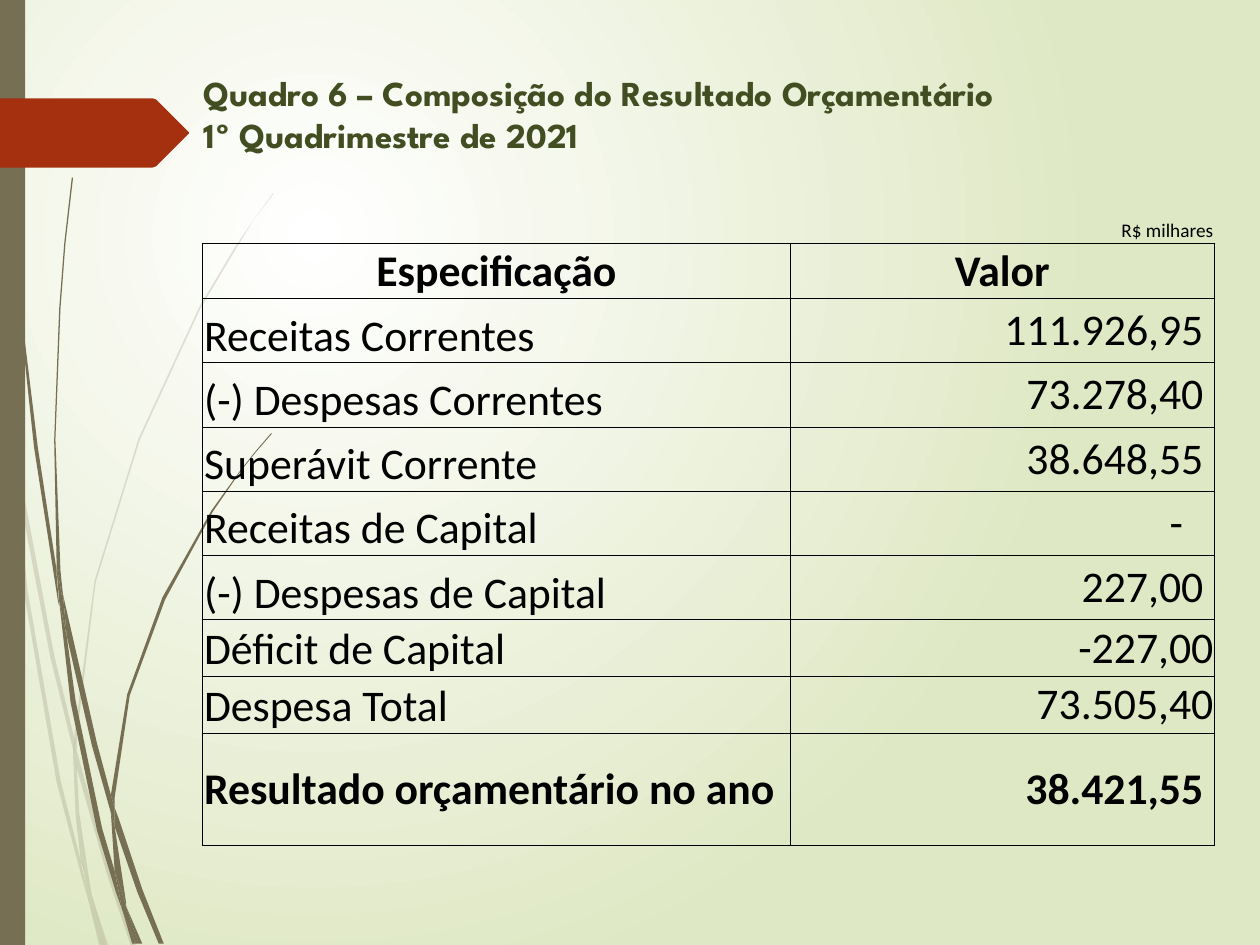
from lxml import etree
from pptx import Presentation
from pptx import util as u
from pptx.dml.color import RGBColor
from pptx.enum import shapes, text
from pptx.oxml import ns, parse_xml

OLIVE = "766F54"
PALE = [
    [(8, 350), (6, 322), (0, 282), (0, 299), (7, 344)],
    [(40, 522), (59, 599), (59, 586), (43, 520), (10, 345), (12, 376)],
    [(64, 607), (61, 596), (61, 610), (85, 694), (104, 751), (108, 751), (88, 692)],
    [(83, 751), (86, 751), (73, 711)],
    [(64, 683), (48, 619), (22, 469), (12, 376), (8, 350), (19, 470), (45, 621),
     (64, 693), (70, 714), (69, 707)],
    [(58, 599), (60, 646), (64, 683), (67, 692), (73, 711), (72, 706), (63, 646),
     (61, 610), (61, 608)],
    [(61, 584), (76, 462), (111, 349), (159, 245), (187, 198), (201, 175), (217, 154),
     (217, 153), (201, 175), (186, 197), (158, 244), (110, 348), (75, 461), (59, 584),
     (59, 586), (61, 596)],
    [(70, 714), (79, 751), (82, 751)],
    [(61, 608), (61, 610), (61, 596), (59, 586), (58, 599)],
    [(67, 692), (65, 683), (69, 707), (70, 714), (82, 751), (83, 751), (73, 711)],
]
DARK = [
    [(5, 110), (14, 233), (27, 355), (46, 477), (47, 481), (45, 457), (45, 453),
     (30, 355), (15, 232), (6, 109), (4, 48), (3, 0), (2, 0), (3, 48)],
    [(73, 592), (88, 645), (88, 633), (88, 631), (77, 590), (50, 472), (53, 505)],
    [(94, 649), (91, 641), (91, 656), (109, 708), (126, 749), (130, 749), (113, 706)],
    [(91, 691), (81, 657), (60, 556), (53, 505), (47, 477), (56, 557), (77, 659),
     (92, 708), (97, 722), (96, 717)],
    [(50, 472), (48, 453), (44, 349), (48, 245), (52, 193), (58, 141), (57, 141),
     (51, 193), (47, 245), (43, 349), (45, 449), (49, 472)],
    [(110, 749), (113, 749), (100, 719)],
    [(47, 477), (53, 505), (50, 472), (49, 472), (45, 449), (45, 453)],
    [(91, 633), (103, 552), (131, 476), (169, 406), (191, 374), (203, 359), (216, 344),
     (215, 344), (203, 358), (191, 373), (168, 405), (129, 474), (101, 551), (88, 631),
     (91, 641)],
    [(97, 722), (105, 749), (108, 749)],
    [(88, 645), (91, 691), (96, 706), (100, 719), (100, 716), (91, 656), (90, 651)],
    [(88, 645), (90, 651), (91, 656), (91, 641), (88, 631), (88, 633)],
    [(96, 706), (91, 691), (96, 717), (97, 722), (108, 749), (110, 749), (100, 719)],
]
ARROW = [(149, 29), (124, 54), (121, 55), (0, 55), (0, 0), (121, 0), (124, 1), (149, 26),
         (150, 27), (150, 28)]
ROWS = [
    ("Receitas Correntes", "111.926,95", 0.51, 0.09),
    ("(-) Despesas Correntes", "73.278,40", 0.51, 0.09),
    ("Superávit Corrente", "38.648,55", 0.51, 0.09),
    ("Receitas de Capital", "-", 0.51, 0.25),
    ("(-) Despesas de Capital", "227,00", 0.51, 0.09),
    ("Déficit de Capital", "-227,00", 0.45, 0.01),
    ("Despesa Total", "73.505,40", 0.45, 0.01),
    ("Resultado orçamentário no ano", "38.421,55", 0.89, 0.09),
]


def color(code):
    """Turn a hex string into a colour."""
    return RGBColor.from_string(code)


def paint(shape, code, alpha=100):
    """Give a shape a plain fill without line or shadow."""
    shape.shadow.inherit = False
    shape.fill.solid()
    shape.fill.fore_color.rgb = color(code)
    shape.line.fill.background()
    if alpha < 100:
        tint = shape.fill._xPr.find(".//" + ns.qn("a:srgbClr"))
        etree.SubElement(tint, ns.qn("a:alpha")).set("val", str(alpha * 1000))


def outline(parts, points, left, top, code, alpha=100):
    """Draw a closed outline from points in hundredths of an inch."""
    pen = parts.build_freeform(*points[0], scale=u.Inches(0.01))
    pen.add_line_segments(points[1:])
    paint(pen.convert_to_shape(u.Inches(left), u.Inches(top)), code, alpha)


def style(para, size, face, code, bold=False):
    """Format the runs of a paragraph."""
    for run in para.runs:
        font = run.font
        font.size, font.name, font.bold = u.Pt(size), face, bold
        font.color.rgb = color(code)


def backdrop(slide):
    """Fill the background with a radial gradient."""
    fill = slide.background.fill
    fill.gradient()
    for stop, code in zip(fill.gradient_stops, ("FFFFFF", "DFE8C4")):
        stop.color.rgb = color(code)
    grad = slide.background._cSld.find(".//" + ns.qn("a:gradFill"))
    ring = parse_xml(f'<a:path {ns.nsdecls("a")} path="circle"><a:fillToRect '
                     'l="50000" t="50000" r="100000" b="100000"/></a:path>')
    grad.replace(grad.find(ns.qn("a:lin")), ring)


def margin(slide, left, top, height):
    """Draw the stems, the side bar and the arrow at the left edge."""
    for stems, alpha in ((PALE, 20), (DARK, 100)):
        group = slide.shapes.add_group_shape()
        for points in stems:
            outline(group.shapes, points, left, top, OLIVE, alpha)
    bar = slide.shapes.add_shape(shapes.MSO_SHAPE.RECTANGLE, u.Inches(left), u.Inches(top),
                                 u.Inches(0.2), u.Inches(height))
    paint(bar, OLIVE)
    outline(slide.shapes, ARROW, left, top + 0.78, "A53010")


def title(slide, left, top, width, height):
    """Write the heading."""
    box = slide.shapes.add_textbox(*map(u.Inches, (left, top, width, height)))
    frame = box.text_frame
    frame.word_wrap = True
    frame.text = "Quadro 6 – Composição do Resultado Orçamentário \v1º Quadrimestre de 2021"
    style(frame.paragraphs[0], 20, "League Spartan", "424D22", True)


def border(cell, sides):
    """Rule the named sides of a cell and clear the others."""
    props = cell._tc.get_or_add_tcPr()
    for spot, side in enumerate("LRTB"):
        ink = '<a:solidFill><a:srgbClr val="000000"/></a:solidFill>'
        if side not in sides:
            ink = "<a:noFill/>"
        props.insert(spot, parse_xml(f'<a:ln{side} {ns.nsdecls("a")} w="6350">{ink}</a:ln{side}>'))


def put(cell, words, size, align, anchor, bold=False, right=0.01):
    """Write one cell of the table."""
    cell.text_frame.text = words
    cell.vertical_anchor = anchor
    cell.margin_left, cell.margin_right = u.Inches(0.01), u.Inches(right)
    para = cell.text_frame.paragraphs[0]
    para.alignment = align
    style(para, size, "Calibri", "000000", bold)


def budget(slide, left, top, width, height):
    """Build the table of revenues and expenses."""
    tall = [0.31, 0.44] + [row[2] for row in ROWS]
    frame = slide.shapes.add_table(len(tall), 3, *map(u.Inches, (left, top, width, height)))
    grid = frame.table
    grid.first_row = grid.horz_banding = False
    for col, size in zip(grid.columns, (4.66, 1.25, 2.12)):
        col.width = u.Inches(size)
    for num, size in enumerate(tall):
        grid.rows[num].height = u.Inches(size)
        for cell in grid.rows[num].cells:
            cell.margin_left = cell.margin_right = cell.margin_top = cell.margin_bottom = 0
            cell.fill.background()
            border(cell, "LRTB" if num else "B")
        if num:
            grid.cell(num, 1).merge(grid.cell(num, 2))
    side, mid = text.PP_ALIGN, text.MSO_ANCHOR.MIDDLE
    low = text.MSO_ANCHOR.BOTTOM
    put(grid.cell(0, 2), "R$ milhares", 11, side.RIGHT, low)
    for col, words in enumerate(("Especificação", "Valor")):
        put(grid.cell(1, col), words, 25, side.CENTER, low, True)
    for num, (name, value, _, gap) in enumerate(ROWS, 2):
        last = num == len(tall) - 1
        put(grid.cell(num, 0), name, 25, side.LEFT, mid if last else low, last)
        put(grid.cell(num, 1), value, 25, side.RIGHT, mid, last, gap)


def main():
    """Build the slide and save it."""
    deck = Presentation()
    deck.slide_width, deck.slide_height = u.Inches(10), u.Inches(7.5)
    slide = deck.slides.add_slide(deck.slide_layouts[6])
    backdrop(slide)
    margin(slide, 0, 0, 7.5)
    title(slide, 1.52, 0.52, 8.5, 0.33)
    budget(slide, 1.61, 1.62, 8.03, 5.12)
    deck.save("out.pptx")


if __name__ == "__main__":
    main()
